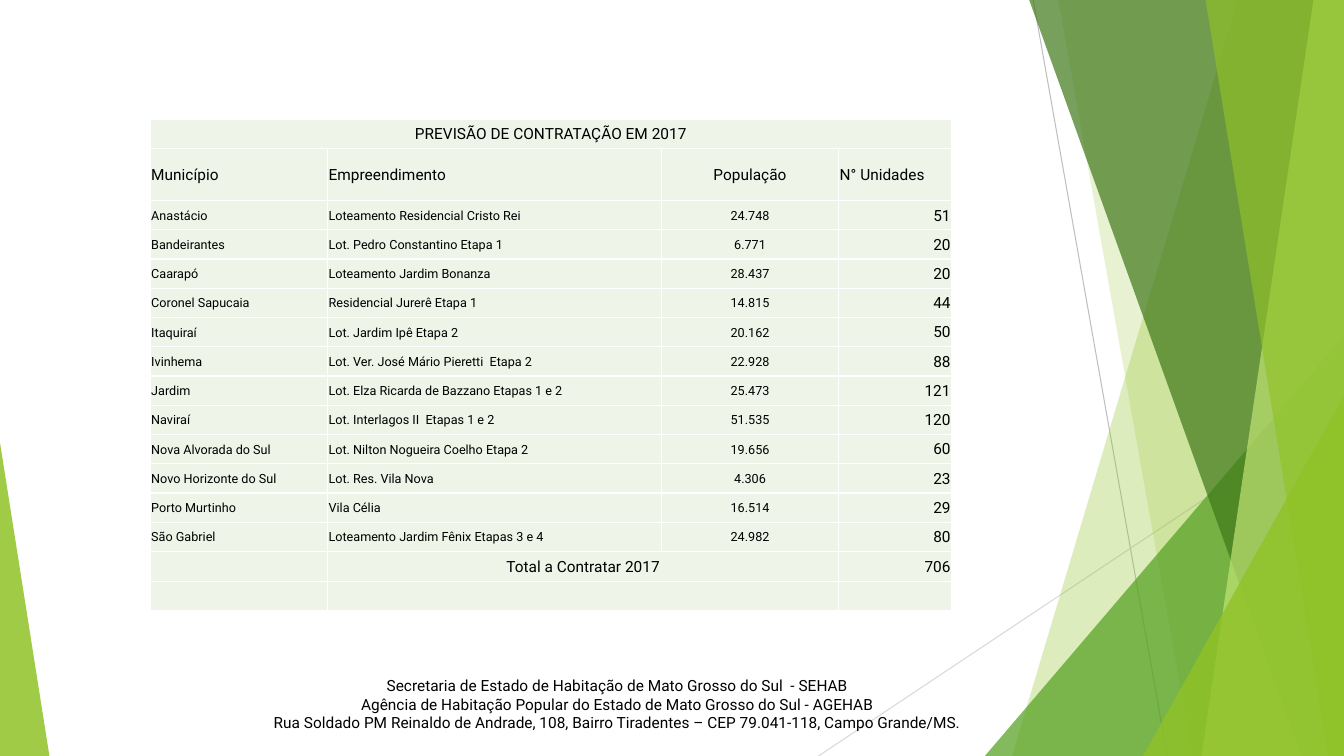
"""Build the slide with the 2017 housing contract forecast."""
from dataclasses import dataclass

import pptx
import pptx.dml.color
import pptx.enum.shapes
import pptx.enum.text
import pptx.oxml.ns
import pptx.util
from lxml import etree

WIDE, HIGH = pptx.util.Inches(13.333), pptx.util.Inches(7.5)
COLORS = {"text": "000000", "cell": "EEF4E8", "edge": "FFFFFF", "gray": "BFBFBF",
          "pale": "D9D9D9", "lime": "90C226", "leaf": "54A021", "dark": "3F7819",
          "light": "C0E474"}
ALIGN = pptx.enum.text.PP_ALIGN
FONT = {"name": "Roboto", "size": pptx.util.Pt(11)}
SMALL = FONT | {"size": pptx.util.Pt(9)}
CELL = {"margin_left": pptx.util.Inches(0.01), "margin_right": pptx.util.Inches(0.01),
        "margin_top": pptx.util.Inches(0.01), "margin_bottom": 0,
        "vertical_anchor": pptx.enum.text.MSO_ANCHOR.MIDDLE}
PLAIN = {"first_row": False, "horz_banding": False}
FRAME = {"word_wrap": False, "auto_size": pptx.enum.text.MSO_AUTO_SIZE.SHAPE_TO_FIT_TEXT}
COLS = (13.2, 24.83, 13.2, 8.4)
SIDES = (ALIGN.LEFT, ALIGN.LEFT, ALIGN.CENTER, ALIGN.RIGHT)
TITLE = "PREVISÃO DE CONTRATAÇÃO EM 2017"
HEADS = ("Município", "Empreendimento", "População", "N° Unidades")
TOWNS = (
    ("Anastácio", "Loteamento Residencial Cristo Rei", "24.748", "51"),
    ("Bandeirantes", "Lot. Pedro Constantino Etapa 1", "6.771", "20"),
    ("Caarapó", "Loteamento Jardim Bonanza", "28.437", "20"),
    ("Coronel Sapucaia", "Residencial Jurerê Etapa 1", "14.815", "44"),
    ("Itaquiraí", "Lot. Jardim Ipê Etapa 2", "20.162", "50"),
    ("Ivinhema", "Lot. Ver. José Mário Pieretti  Etapa 2", "22.928", "88"),
    ("Jardim", "Lot. Elza Ricarda de Bazzano Etapas 1 e 2", "25.473", "121"),
    ("Naviraí", "Lot. Interlagos II  Etapas 1 e 2", "51.535", "120"),
    ("Nova Alvorada do Sul", "Lot. Nilton Nogueira Coelho Etapa 2", "19.656", "60"),
    ("Novo Horizonte do Sul", "Lot. Res. Vila Nova", "4.306", "23"),
    ("Porto Murtinho", "Vila Célia", "16.514", "29"),
    ("São Gabriel", "Loteamento Jardim Fênix Etapas 3 e 4", "24.982", "80"),
)
FOOTER = (
    "Secretaria de Estado de Habitação de Mato Grosso do Sul  - SEHAB",
    "Agência de Habitação Popular do Estado de Mato Grosso do Sul - AGEHAB",
    "Rua Soldado PM Reinaldo de Andrade, 108, Bairro Tiradentes – CEP 79.041-118, "
    "Campo Grande/MS.",
)


@dataclass
class Line:
    """A thin line between two points, in percent of the slide."""
    x1: float
    y1: float
    x2: float
    y2: float
    color: str


@dataclass
class Band:
    """A full-height band from a slanted left side to the right edge."""
    top: float
    base: float
    color: str
    alpha: int


@dataclass
class Wedge:
    """A right triangle standing on the bottom edge."""
    left: float
    top: float
    width: float
    peak: float
    color: str
    alpha: int


LINES = (Line(76.88, 0, 86.85, 100, "gray"), Line(100, 53.73, 60.9, 100, "pale"))
FACETS = (
    Band(92.1, 75.3, "lime", 30),
    Band(78.75, 88.73, "lime", 20),
    Wedge(73.28, 44.4, 26.72, 1, "leaf", 72),
    Band(76.58, 96.83, "dark", 70),
    Band(97.73, 89.4, "light", 70),
    Band(89.7, 98.85, "lime", 65),
    Wedge(85.05, 52.4, 14.95, 1, "lime", 80),
    Wedge(0, 58.53, 3.68, 0, "lime", 85),
)


def across(part: float) -> int:
    """Turn percent of the slide width into a length."""
    return round(WIDE * part / 100)


def down(part: float) -> int:
    """Turn percent of the slide height into a length."""
    return round(HIGH * part / 100)


def tint(name: str) -> pptx.dml.color.RGBColor:
    """Look up a named colour."""
    return pptx.dml.color.RGBColor.from_string(COLORS[name])


def apply(item: object, values: dict) -> None:
    """Set each format value on an item."""
    for key, value in values.items():
        setattr(item, key, value)


def child(node: etree._Element, tag: str, **values: str) -> etree._Element:
    """Append an XML element with its values."""
    return etree.SubElement(node, pptx.oxml.ns.qn(tag), **values)


def draw_line(shapes, line: Line) -> None:
    """Draw one thin line."""
    link = shapes.add_connector(pptx.enum.shapes.MSO_CONNECTOR.STRAIGHT, across(line.x1),
                                down(line.y1), across(line.x2), down(line.y2))
    apply(link.line, {"width": pptx.util.Pt(0.75)})
    link.line.color.rgb = tint(line.color)
    child(link._element.spPr, "a:effectLst")


def draw_facet(shapes, facet: Band | Wedge) -> None:
    """Draw one see-through band or wedge."""
    if isinstance(facet, Band):
        pen = shapes.build_freeform(across(facet.top), 0)
        pen.add_line_segments([(WIDE, 0), (WIDE, HIGH), (across(facet.base), HIGH)])
        shape = pen.convert_to_shape()
    else:
        shape = shapes.add_shape(pptx.enum.shapes.MSO_SHAPE.ISOSCELES_TRIANGLE,
                                 across(facet.left), down(facet.top),
                                 across(facet.width), down(100 - facet.top))
        shape.adjustments[0] = facet.peak
    shape.shadow.inherit = False
    shape.line.fill.background()
    shape.fill.solid()
    shape.fill.fore_color.rgb = tint(facet.color)
    paint = shape._element.spPr.find(".//" + pptx.oxml.ns.qn("a:srgbClr"))
    child(paint, "a:alpha", val=str(facet.alpha * 1000))


def write(para, text: str, align: ALIGN, font: dict) -> None:
    """Write one paragraph of text."""
    para.alignment = align
    if text:
        run = para.add_run()
        run.text = text
        apply(run.font, font)
        run.font.color.rgb = tint("text")
    else:
        child(para._p, "a:endParaRPr", sz="1100")


def dress(cell) -> None:
    """Give a cell its insets, borders and fill."""
    apply(cell, CELL)
    props = cell._tc.get_or_add_tcPr()
    for side in ("L", "R", "T", "B"):
        edge = child(props, f"a:ln{side}", w="12700")
        child(child(edge, "a:solidFill"), "a:srgbClr", val=COLORS["edge"])
    cell.fill.solid()
    cell.fill.fore_color.rgb = tint("cell")


def draw_table(shapes) -> None:
    """Draw the forecast table."""
    mid = ALIGN.CENTER
    heads = (*SIDES[:3], ALIGN.LEFT)
    rows = [((TITLE, "", "", ""), (mid,) * 4, (FONT,) * 4, 3.87),
            (HEADS, heads, (FONT,) * 4, 6.93)]
    rows += [(town, SIDES, (SMALL,) * 3 + (FONT,), 3.87) for town in TOWNS]
    total = ("", "Total a Contratar 2017", "", "706")
    rows += [(total, (mid, mid, mid, ALIGN.RIGHT), (FONT,) * 4, 4),
             (("",) * 4, SIDES, (FONT,) * 4, 3.87)]
    frame = shapes.add_table(len(rows), len(COLS), across(11.18), down(15.73),
                             across(sum(COLS)), down(sum(row[3] for row in rows)))
    table = frame.table
    apply(table, PLAIN)
    for col, width in zip(table.columns, COLS):
        col.width = across(width)
    for i, (texts, sides, fonts, height) in enumerate(rows):
        table.rows[i].height = down(height)
        for j, (text, side, font) in enumerate(zip(texts, sides, fonts)):
            dress(table.cell(i, j))
            write(table.cell(i, j).text_frame.paragraphs[0], text, side, font)
    last = len(rows) - 1
    for row, start, end in ((0, 0, 3), (last - 1, 1, 2), (last, 1, 2)):
        table.cell(row, start).merge(table.cell(row, end))


def draw_footer(shapes) -> None:
    """Write the address lines."""
    box = shapes.add_textbox(across(15.98), down(88.8), across(59.93), down(11.2))
    frame = box.text_frame
    apply(frame, FRAME)
    for i, text in enumerate(FOOTER):
        para = frame.add_paragraph() if i else frame.paragraphs[0]
        write(para, text, ALIGN.CENTER, FONT)


def main() -> None:
    """Build and save the slide."""
    deck = pptx.Presentation()
    apply(deck, {"slide_width": WIDE, "slide_height": HIGH})
    shapes = deck.slides.add_slide(deck.slide_layouts[6]).shapes
    for line in LINES:
        draw_line(shapes, line)
    for facet in FACETS:
        draw_facet(shapes, facet)
    draw_footer(shapes)
    draw_table(shapes)
    deck.save("out.pptx")


if __name__ == "__main__":
    main()
